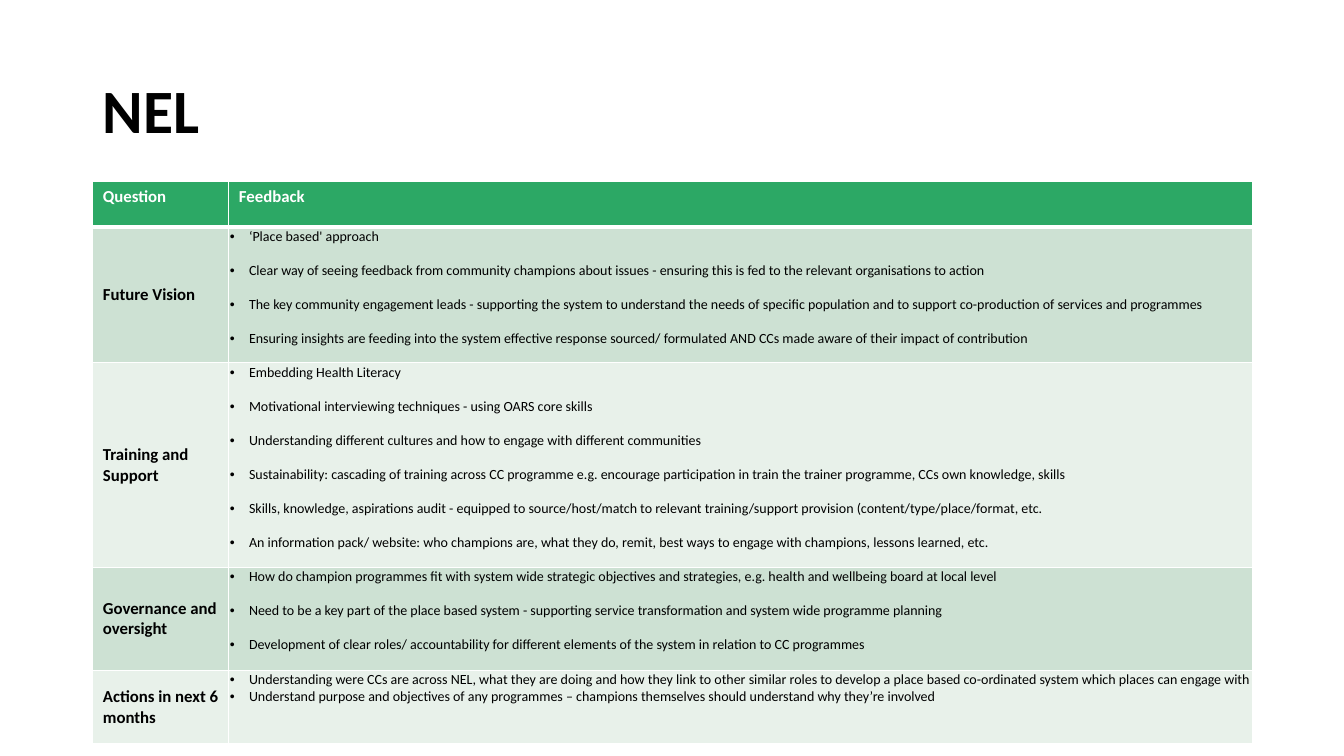
from dataclasses import dataclass

from lxml import etree
from pptx import Presentation
from pptx.dml.color import RGBColor
from pptx.enum import text
from pptx.oxml import ns
from pptx.util import Inches, Pt


@dataclass(frozen=True)
class Theme:
    font: str = "Calibri"
    ink: str = "000000"
    white: str = "FFFFFF"
    header: str = "2CA865"
    bands: tuple = ("CDE1D3", "E8F1EA")
    title_size: float = 44
    label_size: float = 12
    bullet_size: float = 10
    bullet_gap: float = 12.2
    rule: float = 1
    header_rule: float = 3


THEME = Theme()
HEADINGS = ("Question", "Feedback")
COLUMN_WIDTHS = (1.35, 10.15)
HEADER_HEIGHT = 0.45
TOPICS = [
    ("Future Vision", 1.35, THEME.bullet_gap, [
        "‘Place based' approach",
        "Clear way of seeing feedback from community champions about issues - ensuring this is fed to the relevant organisations to action",
        "The key community engagement leads - supporting the system to understand the needs of specific population and to support co-production of services and programmes",
        "Ensuring insights are feeding into the system effective response sourced/ formulated AND CCs made aware of their impact of contribution",
    ]),
    ("Training and Support", 2.03, THEME.bullet_gap, [
        "Embedding Health Literacy",
        "Motivational interviewing techniques - using OARS core skills",
        "Understanding different cultures and how to engage with different communities",
        "Sustainability: cascading of training across CC programme e.g. encourage participation in train the trainer programme, CCs own knowledge, skills",
        "Skills, knowledge, aspirations audit - equipped to source/host/match to relevant training/support provision (content/type/place/format, etc.",
        "An information pack/ website: who champions are, what they do, remit, best ways to engage with champions, lessons learned, etc.",
    ]),
    ("Governance and oversight", 1.02, THEME.bullet_gap, [
        "How do champion programmes fit with system wide strategic objectives and strategies, e.g. health and wellbeing board at local level",
        "Need to be a key part of the place based system - supporting service transformation and system wide programme planning",
        "Development of clear roles/ accountability for different elements of the system in relation to CC programmes",
    ]),
    ("Actions in next 6 months", 0.73, 0, [
        "Understanding were CCs are across NEL, what they are doing and how they link to other similar roles to develop a place based co-ordinated system which places can engage with",
        "Understand purpose and objectives of any programmes – champions themselves should understand why they’re involved",
    ]),
]


def style(para, size, color, bold=False):
    para.font.name = THEME.font
    para.font.size = Pt(size)
    para.font.bold = bold
    para.font.color.rgb = RGBColor.from_string(color)


def paint_cell(cell, color, top=THEME.rule, bottom=THEME.rule):
    properties = cell._tc.get_or_add_tcPr()
    widths = {"lnL": THEME.rule, "lnR": THEME.rule, "lnT": top, "lnB": bottom}
    for side, width in widths.items():
        line = etree.SubElement(properties, ns.qn(f"a:{side}"), w=str(Pt(width)))
        fill = etree.SubElement(line, ns.qn("a:solidFill"))
        etree.SubElement(fill, ns.qn("a:srgbClr"), val=THEME.white)
    cell.fill.solid()
    cell.fill.fore_color.rgb = RGBColor.from_string(color)


def write_label(cell, words, color):
    cell.text = words
    style(cell.text_frame.paragraphs[0], THEME.label_size, color, bold=True)


def write_bullets(cell, items, gap):
    cell.margin_left = cell.margin_top = cell.margin_right = Inches(0.01)
    cell.margin_bottom = 0
    cell.text = "\n".join(items)
    for index, para in enumerate(cell.text_frame.paragraphs):
        properties = para._p.get_or_add_pPr()
        properties.set("marL", str(Inches(0.19)))
        properties.set("indent", str(-Inches(0.19)))
        etree.SubElement(properties, ns.qn("a:buFont"), typeface="Arial")
        etree.SubElement(properties, ns.qn("a:buChar"), char="•")
        if index:
            para.space_before = Pt(gap)
        style(para, THEME.bullet_size, THEME.ink)


def add_title(page, words, left, top, width, height):
    box = page.shapes.add_textbox(Inches(left), Inches(top), Inches(width), Inches(height))
    frame = box.text_frame
    frame.word_wrap = True
    frame.vertical_anchor = text.MSO_ANCHOR.MIDDLE
    frame.text = words
    para = frame.paragraphs[0]
    para.line_spacing = 0.9
    style(para, THEME.title_size, THEME.ink, bold=True)


def add_feedback_table(page, left, top, width):
    heights = [HEADER_HEIGHT] + [height for _, height, _, _ in TOPICS]
    table = page.shapes.add_table(
        len(heights), len(HEADINGS),
        Inches(left), Inches(top), Inches(width), Inches(sum(heights)),
    ).table
    for column, share in zip(table.columns, COLUMN_WIDTHS):
        column.width = Inches(width * share / sum(COLUMN_WIDTHS))
    for row, height in zip(table.rows, heights):
        row.height = Inches(height)
    for column, heading in enumerate(HEADINGS):
        cell = table.cell(0, column)
        write_label(cell, heading, THEME.white)
        paint_cell(cell, THEME.header, bottom=THEME.header_rule)
    for row, (topic, _, gap, items) in enumerate(TOPICS, start=1):
        label, feedback = table.cell(row, 0), table.cell(row, 1)
        label.vertical_anchor = text.MSO_ANCHOR.MIDDLE
        write_label(label, topic, THEME.ink)
        write_bullets(feedback, items, gap)
        for cell in (label, feedback):
            paint_cell(
                cell,
                THEME.bands[(row - 1) % len(THEME.bands)],
                top=THEME.header_rule if row == 1 else THEME.rule,
            )


def main():
    deck = Presentation()
    deck.slide_width, deck.slide_height = Inches(13.33), Inches(7.5)
    page = deck.slides.add_slide(deck.slide_layouts[6])
    add_title(page, "NEL", 0.92, 0.4, 11.5, 1.45)
    add_feedback_table(page, 0.92, 1.8, 11.5)
    deck.save("out.pptx")


if __name__ == "__main__":
    main()
